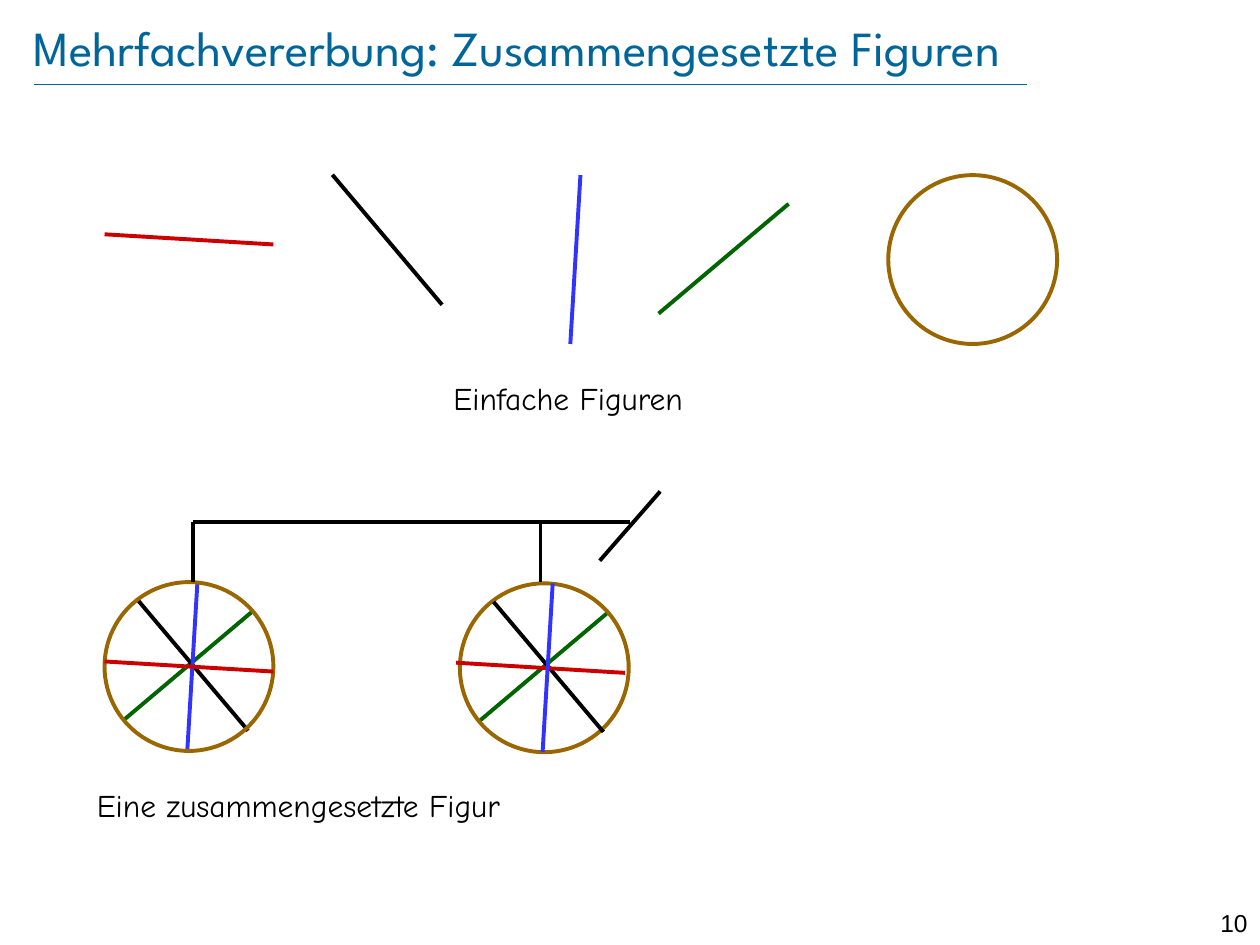
from lxml import etree
from pptx import Presentation
from pptx.dml.color import RGBColor
from pptx.enum.shapes import MSO_CONNECTOR, MSO_SHAPE
from pptx.enum.text import MSO_ANCHOR, PP_ALIGN
from pptx.oxml.ns import qn
from pptx.util import Inches, Pt

LINE, OVAL = MSO_CONNECTOR.STRAIGHT, MSO_SHAPE.OVAL
LEFT, RIGHT = PP_ALIGN.LEFT, PP_ALIGN.RIGHT
TOP, MIDDLE = MSO_ANCHOR.TOP, MSO_ANCHOR.MIDDLE

TEAL = RGBColor(0x00, 0x66, 0x99)
BLACK = RGBColor(0x00, 0x00, 0x00)
RED = RGBColor(0xCC, 0x00, 0x00)
GREEN = RGBColor(0x00, 0x64, 0x00)
BLUE = RGBColor(0x33, 0x33, 0xFF)
BROWN = RGBColor(0x99, 0x66, 0x00)

COLS, ROWS = 100, 75
CELL = Inches(0.1)
WHEEL = 13.4
SPOKES = {
    "red": (RED, 0, 0.47, 1, 0.53),
    "black": (BLACK, 0.2, 0.11, 0.85, 0.88),
    "blue": (BLUE, 0.55, 0, 0.49, 1),
    "green": (GREEN, 0.88, 0.17, 0.11, 0.82),
}


def grid(*cells):
    """Convert grid cells to lengths."""
    return [round(c * CELL) for c in cells]


def add_line(shapes, x1, y1, x2, y2, color, width=2.25):
    """Draw a straight line between two grid points."""
    sp = shapes.add_connector(LINE, *grid(x1, y1, x2, y2))
    sp.line.color.rgb = color
    sp.line.width = Pt(width)
    etree.SubElement(sp._element.spPr, qn("a:effectLst"))


def add_text(shapes, box, text, font, size, color=BLACK, align=LEFT, anchor=TOP, inset=None):
    """Place a one-line text in a grid box."""
    tf = shapes.add_textbox(*grid(*box)).text_frame
    tf.word_wrap = True
    tf.vertical_anchor = anchor
    if inset is not None:
        tf.margin_left = tf.margin_right = tf.margin_top = tf.margin_bottom = inset
    tf.text = text
    p = tf.paragraphs[0]
    p.alignment = align
    r = p.runs[0]
    r.font.name, r.font.size = font, Pt(size)
    r.font.color.rgb = color


def add_circle(shapes, x, y):
    """Draw the rim of a wheel."""
    sp = shapes.add_shape(OVAL, *grid(x, y, WHEEL, WHEEL))
    sp.shadow.inherit = False
    sp.fill.background()
    sp.line.color.rgb = BROWN
    sp.line.width = Pt(2.25)


def add_spoke(shapes, name, x, y):
    """Draw a named spoke inside the wheel box at x, y."""
    color, x1, y1, x2, y2 = SPOKES[name]
    add_line(shapes, x + x1 * WHEEL, y + y1 * WHEEL, x + x2 * WHEEL, y + y2 * WHEEL, color)


def add_wheel(shapes, x, y, order, red_shift=0):
    """Draw rim and spokes in the given stacking order."""
    group = shapes.add_group_shape().shapes
    for name in order:
        if name == "rim":
            add_circle(group, x, y)
        else:
            add_spoke(group, name, x + (red_shift if name == "red" else 0), y)


def add_frame(shapes, x, y):
    """Draw saddle bar, two posts and handlebar."""
    group = shapes.add_group_shape().shapes
    for post in (0, 27.6):
        add_line(group, x + post, y + 4.8, x + post, y, BLACK)
    add_line(group, x, y, x + 34.7, y, BLACK)
    add_line(group, x + 37.1, y - 2.4, x + 32.3, y + 3.1, BLACK)


def add_header(shapes, x, y, w, h):
    """Place the title and its rule."""
    add_line(shapes, x, y + 5.4, x + 78.8, y + 5.4, TEAL, 0.25)
    add_text(shapes, (x, y, w, h), "Mehrfachvererbung: Zusammengesetzte Figuren",
             "League Spartan", 28, TEAL, anchor=MIDDLE, inset=0)


def add_simple_figures(shapes, x, y):
    """Place the row of single figures and its caption."""
    for name, dx, dy in (("red", 0, -1.6), ("black", 15.4, -1.5),
                         ("blue", 30.4, 0), ("green", 42.5, 0)):
        add_spoke(shapes, name, x + dx, y + dy)
    add_circle(shapes, x + 62.2, y)
    add_text(shapes, (x + 26.7, y + 15.7, 26.8, 4), "Einfache Figuren", "Comic Neue", 18)


def add_compound_figure(shapes, x, y):
    """Place the vehicle made of simple figures and its caption."""
    add_wheel(shapes, x, y + 4.8, ("green", "black", "blue", "rim", "red"))
    add_wheel(shapes, x + 28.2, y + 4.9, ("green", "rim", "black", "red", "blue"), -0.3)
    add_frame(shapes, x + 7, y)
    add_text(shapes, (x - 1.6, y + 20.5, 39.3, 4), "Eine zusammengesetzte Figur",
             "Comic Neue", 18)


def main():
    """Build and save the slide."""
    prs = Presentation()
    prs.slide_width, prs.slide_height = grid(COLS, ROWS)
    shapes = prs.slides.add_slide(prs.slide_layouts[6]).shapes
    add_header(shapes, 2.7, 1.3, 93, 4.8)
    add_simple_figures(shapes, 8.3, 13.9)
    add_compound_figure(shapes, 8.3, 41.4)
    add_text(shapes, (COLS - 5.5, ROWS - 3.4, 5.5, 2.4), "10", "Arial", 14, align=RIGHT)
    prs.save("out.pptx")


if __name__ == "__main__":
    main()
